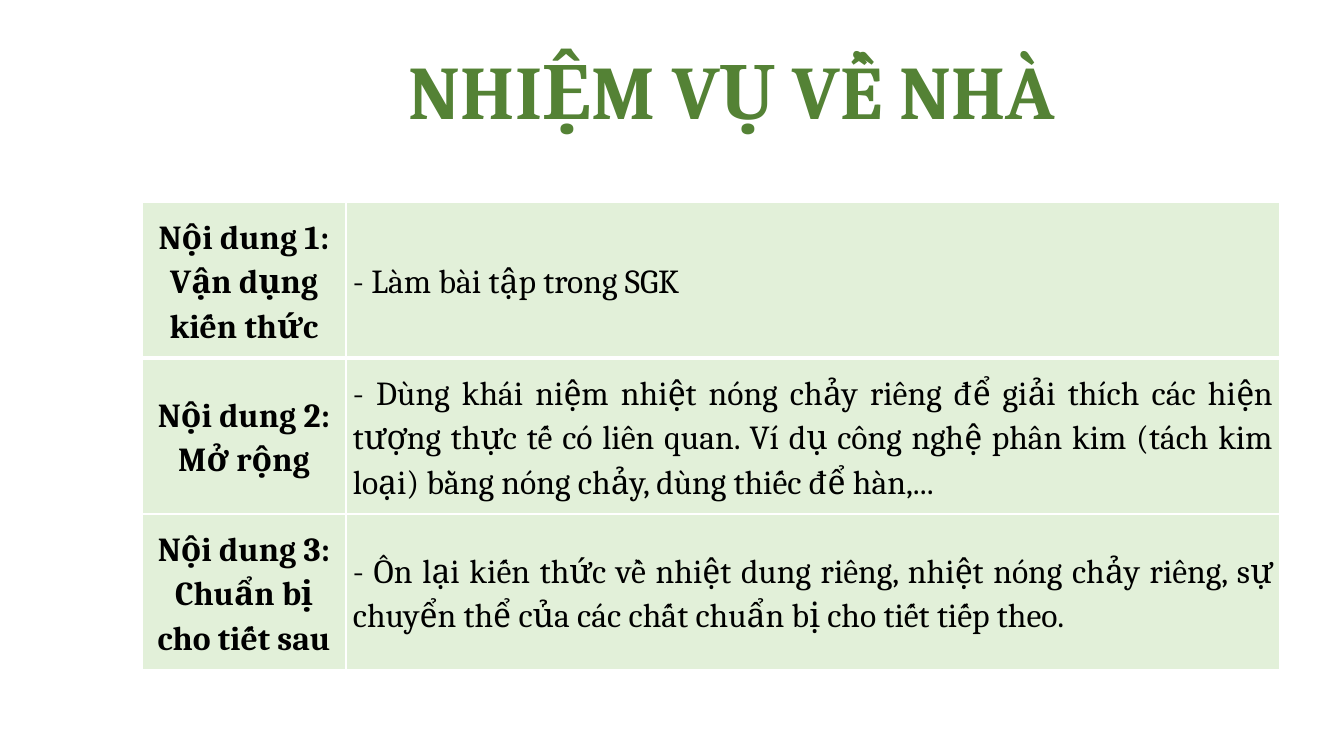
from pptx import Presentation
from pptx.dml.color import RGBColor
from pptx.enum.text import MSO_ANCHOR as Anchor, MSO_AUTO_SIZE as Fit, PP_ALIGN as Align
from pptx.oxml import parse_xml
from pptx.util import Pt

TITLE = "NHIỆM VỤ VỀ NHÀ "
TASKS = [
    (["Nội dung 1:", "Vận dụng kiến thức"],
     ["- Làm bài tập trong SGK"]),
    (["Nội dung 2:", "Mở rộng"],
     ["- Dùng khái niệm nhiệt nóng chảy riêng để giải thích các hiện tượng thực tế có liên quan. "
      "Ví dụ công nghệ phân kim (tách kim loại) bằng nóng chảy, dùng thiếc để hàn,..."]),
    (["Nội dung 3:", "Chuẩn bị cho tiết sau"],
     ["- Ôn lại kiến thức về nhiệt dung riêng, nhiệt nóng chảy riêng, "
      "sự chuyển thể của các chất chuẩn bị cho tiết tiếp theo."]),
]
COLS = [204, 934]
ROW = 156
FONT = "Cambria"
GREEN, MINT, BLACK, WHITE = "548235", "E2F0D9", "000000", "FFFFFF"
NS = "http://schemas.openxmlformats.org/drawingml/2006/main"


def px(n):
    return round(n * 9144000 / 1008)


def color(code):
    return RGBColor.from_string(code)


def style(para, size, code, bold, align):
    para.alignment = align
    font = para.font
    font.name, font.size, font.bold = FONT, Pt(size), bold
    font.color.rgb = color(code)


def border(cell, side, width):
    cell._tc.get_or_add_tcPr().append(parse_xml(
        f'<a:ln{side} xmlns:a="{NS}" w="{Pt(width)}"><a:solidFill>'
        f'<a:srgbClr val="{WHITE}"/></a:solidFill></a:ln{side}>'))


def fill_cell(cell, lines, row, head):
    for side in "LRTB":
        thick = (side, row) in (("B", 0), ("T", 1))
        border(cell, side, 3 if thick else 1)
    cell.fill.solid()
    cell.fill.fore_color.rgb = color(MINT)
    cell.vertical_anchor = Anchor.MIDDLE
    cell.margin_left = cell.margin_right = px(7)
    cell.margin_top = cell.margin_bottom = 0
    cell.text = "\n".join(lines)
    for para in cell.text_frame.paragraphs:
        para.line_spacing = 1.15
        style(para, 24, BLACK, head, Align.CENTER if head else Align.JUSTIFY)


def main():
    deck = Presentation()
    deck.slide_width, deck.slide_height = px(1344), px(756)
    slide = deck.slides.add_slide(deck.slide_layouts[5])

    title = slide.shapes.title
    title.left, title.top, title.width, title.height = map(px, (375, 39, 731, 102))
    frame = title.text_frame
    frame.text = TITLE
    frame.word_wrap = True
    frame.auto_size = Fit.SHAPE_TO_FIT_TEXT
    frame.vertical_anchor = Anchor.TOP
    style(frame.paragraphs[0], 54, GREEN, True, Align.CENTER)

    table = slide.shapes.add_table(
        len(TASKS), len(COLS), px(142), px(202), px(sum(COLS)), px(ROW * len(TASKS))).table
    table.first_row = table.horz_banding = False
    for col, width in zip(table.columns, COLS):
        col.width = px(width)
    for r, task in enumerate(TASKS):
        table.rows[r].height = px(ROW)
        for c, lines in enumerate(task):
            fill_cell(table.cell(r, c), lines, r, c == 0)

    deck.save("out.pptx")


if __name__ == "__main__":
    main()
